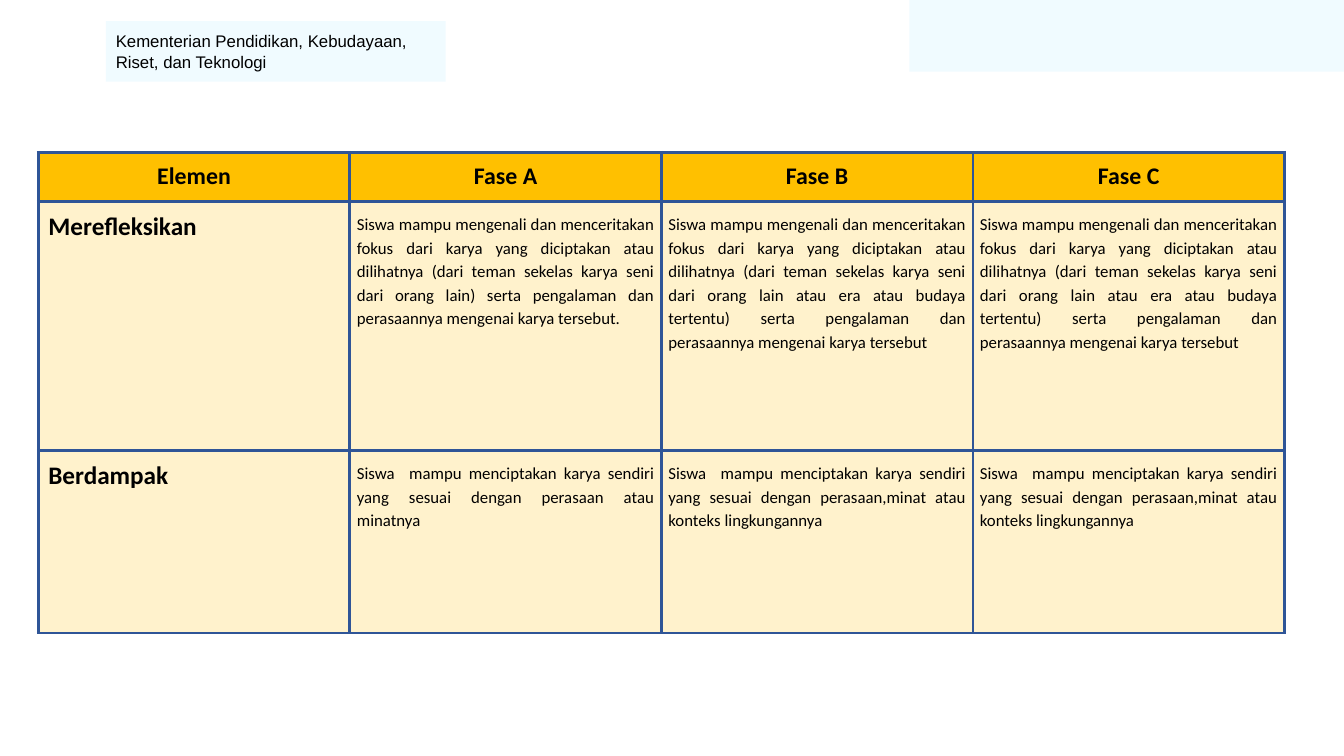
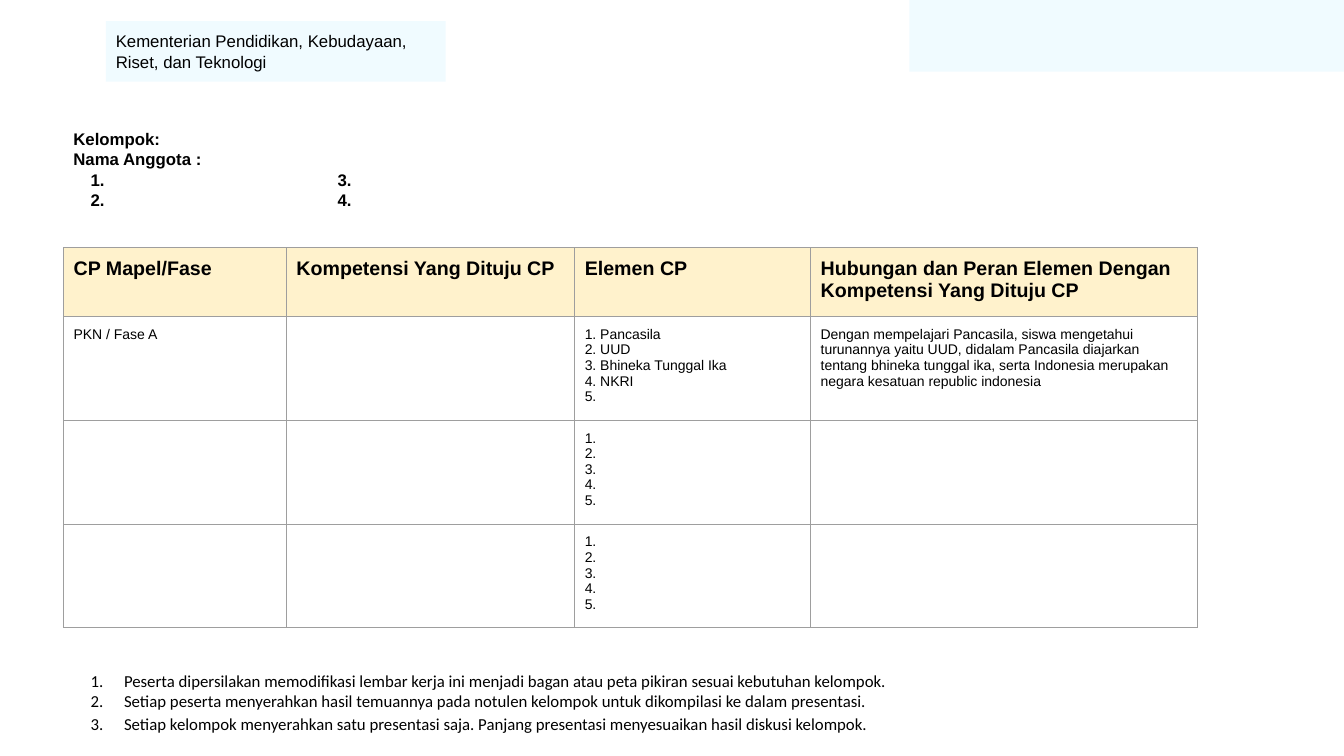
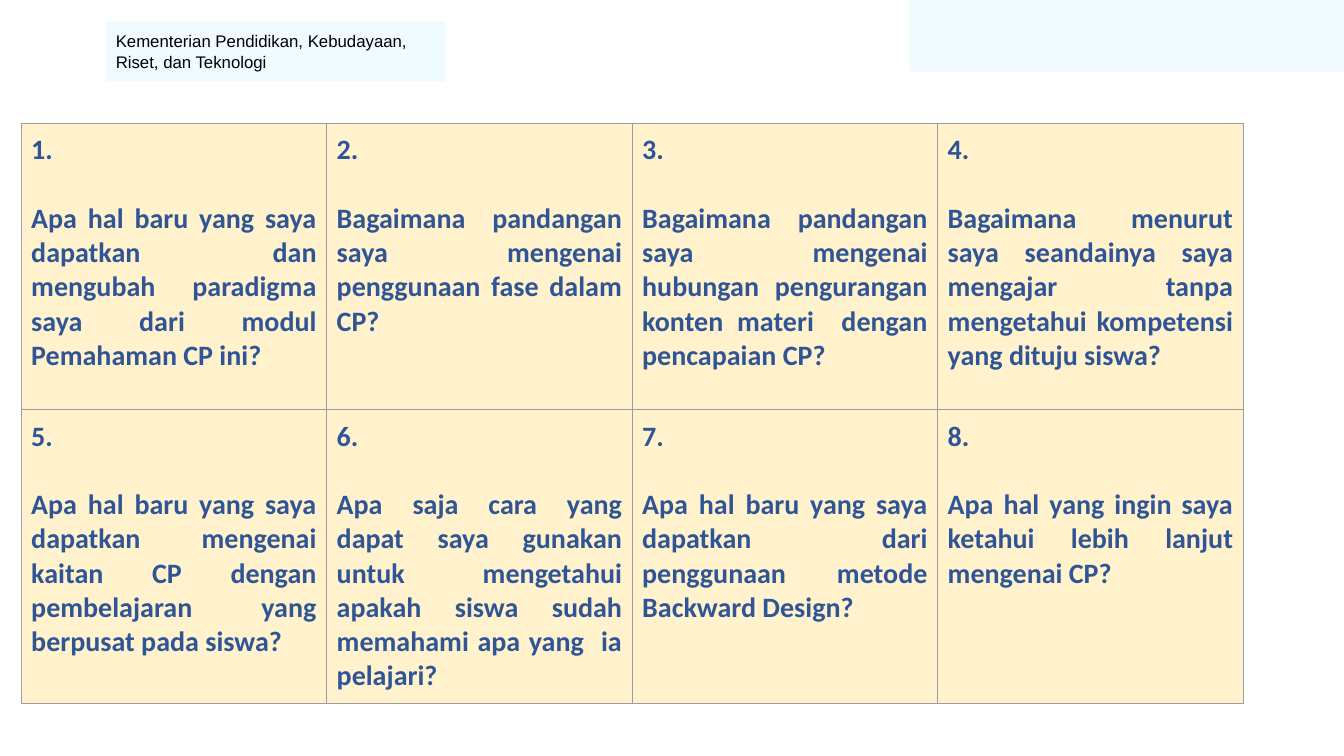
from dataclasses import dataclass

from lxml import etree
from pptx import Presentation
from pptx.dml.color import RGBColor
from pptx.enum.shapes import MSO_SHAPE as Shape
from pptx.enum.text import MSO_ANCHOR as Anchor, MSO_AUTO_SIZE as AutoSize, PP_ALIGN as Align
from pptx.oxml.ns import qn
from pptx.util import Inches, Pt


# Theme: colours, type styles and cell margins
@dataclass(frozen=True)
class Theme:
    black = RGBColor.from_string("000000")
    blue = RGBColor.from_string("2F5597")
    gray = RGBColor.from_string("9E9E9E")
    ice = RGBColor.from_string("F0FBFF")
    amber = RGBColor.from_string("FFC000")
    cream = RGBColor.from_string("FFF2CC")
    margin = 0.1
    narrow_margin = 0.07


THEME = Theme()


def text_style(size, name="Calibri", bold=False, color=THEME.black, **paragraph):
    return {"font": {"size": Pt(size), "name": name, "bold": bold},
            "color": color, "paragraph": paragraph}


STYLES = {
    "band": text_style(12, "Arial"),
    "phase_head": text_style(17, bold=True, alignment=Align.CENTER),
    "element": text_style(18, bold=True),
    "outcome": text_style(12, alignment=Align.JUSTIFY, line_spacing=1.15),
    "group": text_style(12, "Arial", bold=True),
    "sheet_head": text_style(14, "Arial", bold=True),
    "sheet": text_style(10, "Arial"),
    "instruction": text_style(12, space_before=Pt(0)),
    "question": text_style(20, bold=True, color=THEME.blue, alignment=Align.JUSTIFY),
}


# Content
REFLECT_A = ("Siswa mampu mengenali dan menceritakan fokus dari karya yang diciptakan atau "
             "dilihatnya (dari teman sekelas karya seni dari orang lain) serta pengalaman dan "
             "perasaannya mengenai karya tersebut.")
REFLECT_BC = ("Siswa mampu mengenali dan menceritakan fokus dari karya yang diciptakan atau "
              "dilihatnya (dari teman sekelas karya seni dari orang lain atau era atau budaya "
              "tertentu) serta pengalaman dan perasaannya mengenai karya tersebut")
IMPACT_A = "Siswa  mampu menciptakan karya sendiri yang sesuai dengan perasaan atau minatnya"
IMPACT_BC = ("Siswa  mampu menciptakan karya sendiri yang sesuai dengan perasaan,minat atau "
             "konteks lingkungannya")
PHASE_ROWS = [
    ["Elemen", "Fase A", "Fase B", "Fase C"],
    ["Merefleksikan", REFLECT_A, REFLECT_BC, REFLECT_BC],
    ["Berdampak", IMPACT_A, IMPACT_BC, IMPACT_BC],
]

BLANK_LIST = "\n".join(f"{number}." for number in range(1, 6))
SHEET_ROWS = [
    ["CP Mapel/Fase", "Kompetensi Yang Dituju CP", "Elemen CP",
     "Hubungan dan Peran Elemen Dengan Kompetensi Yang Dituju CP"],
    ["PKN / Fase A", "", "1. Pancasila\n2. UUD\n3. Bhineka Tunggal Ika\n4. NKRI\n5.",
     "Dengan mempelajari Pancasila, siswa mengetahui turunannya yaitu UUD, didalam Pancasila "
     "diajarkan tentang bhineka tunggal ika, serta Indonesia merupakan negara kesatuan "
     "republic indonesia"],
    ["", "", BLANK_LIST, ""],
    ["", "", BLANK_LIST, ""],
]
INSTRUCTIONS = [
    "Peserta dipersilakan memodifikasi lembar kerja ini menjadi bagan atau peta pikiran "
    "sesuai kebutuhan kelompok.",
    "Setiap peserta menyerahkan hasil temuannya pada notulen kelompok untuk dikompilasi ke "
    "dalam presentasi.",
    "Setiap kelompok menyerahkan satu presentasi saja. Panjang presentasi menyesuaikan hasil "
    "diskusi kelompok.",
]

QUESTIONS = [
    "Apa hal baru yang saya dapatkan dan mengubah paradigma saya dari modul Pemahaman CP ini?",
    "Bagaimana pandangan saya mengenai penggunaan fase dalam CP?",
    "Bagaimana pandangan saya mengenai hubungan  pengurangan konten materi  dengan "
    "pencapaian CP?",
    "Bagaimana menurut saya seandainya saya mengajar tanpa mengetahui kompetensi yang dituju "
    "siswa?",
    "Apa hal baru yang saya dapatkan mengenai kaitan CP dengan pembelajaran yang berpusat "
    "pada siswa?",
    "Apa saja cara yang dapat saya gunakan untuk mengetahui apakah siswa sudah memahami apa "
    "yang  ia pelajari?",
    "Apa hal baru yang saya dapatkan dari penggunaan metode Backward Design?",
    "Apa hal yang ingin saya ketahui lebih lanjut mengenai CP?",
]


# Text helpers
def set_values(target, values):
    for name, value in values.items():
        setattr(target, name, value)


def set_margins(target, side=THEME.margin):
    set_values(target, {"margin_left": Inches(side), "margin_right": Inches(side),
                        "margin_top": Inches(THEME.margin),
                        "margin_bottom": Inches(THEME.margin)})


def write(frame, lines, style):
    for index, line in enumerate(lines):
        paragraph = frame.add_paragraph() if index else frame.paragraphs[0]
        set_values(paragraph, style["paragraph"])
        run = paragraph.add_run()
        run.text = line
        set_values(run.font, style["font"])
        run.font.color.rgb = style["color"]


def number_paragraph(paragraph, tab=None):
    properties = paragraph._p.get_or_add_pPr()
    properties.set("marL", str(Inches(0.5)))
    properties.set("indent", str(Inches(-0.33)))
    etree.SubElement(properties, qn("a:buFont"), typeface="+mj-lt")
    etree.SubElement(properties, qn("a:buAutoNum"), type="arabicPeriod")
    if tab:
        tabs = etree.SubElement(properties, qn("a:tabLst"))
        etree.SubElement(tabs, qn("a:tab"), pos=str(Inches(tab)), algn="l")


def prepare_frame(frame):
    set_margins(frame)
    set_values(frame, {"word_wrap": True, "auto_size": AutoSize.NONE,
                       "vertical_anchor": Anchor.TOP})


# Table helpers
def set_borders(cell, color, width):
    properties = cell._tc.get_or_add_tcPr()
    for side in ("lnL", "lnR", "lnT", "lnB"):
        line = etree.SubElement(properties, qn(f"a:{side}"), w=str(Pt(width)))
        fill = etree.SubElement(line, qn("a:solidFill"))
        etree.SubElement(fill, qn("a:srgbClr"), val=str(color))


def add_grid(slide, left, top, widths, heights, border):
    frame = slide.shapes.add_table(len(heights), len(widths), Inches(left), Inches(top),
                                   Inches(sum(widths)), Inches(sum(heights)))
    table = frame.table
    set_values(table, {"first_row": False, "horz_banding": False})
    for column, width in zip(table.columns, widths):
        column.width = Inches(width)
    for row, height in zip(table.rows, heights):
        row.height = Inches(height)
    for cell in table.iter_cells():
        set_borders(cell, *border)
        set_margins(cell)
    return table


def fill_cell(cell, text, style, color=None):
    if color is None:
        cell.fill.background()
    else:
        cell.fill.solid()
        cell.fill.fore_color.rgb = color
    if text:
        write(cell.text_frame, text.split("\n"), STYLES[style])


# Shared bands, kept on the slide master
def add_master_bands(presentation, slide):
    bands = [((9.02, 0, 4.32, 0.71), None),
             ((1.05, 0.21, 3.37, 0.6),
              "Kementerian Pendidikan, Kebudayaan, Riset, dan Teknologi")]
    for number, (box, text) in enumerate(bands, start=101):
        shape = slide.shapes.add_shape(Shape.RECTANGLE, *map(Inches, box))
        shape.shadow.inherit = False
        shape.fill.solid()
        shape.fill.fore_color.rgb = THEME.ice
        shape.line.fill.background()
        if text:
            prepare_frame(shape.text_frame)
            shape.text_frame.vertical_anchor = Anchor.MIDDLE
            write(shape.text_frame, [text], STYLES["band"])
            shape.text_frame.paragraphs[0].alignment = Align.LEFT
        shape.element.nvSpPr.cNvPr.set("id", str(number))
        presentation.slide_master.shapes.element.append(shape.element)


# Slides
def build_phases(slide):
    table = add_grid(slide, 0.38, 1.51, [3.09] * 4, [0.49, 2.47, 1.81], (THEME.blue, 2.25))
    for row, texts in enumerate(PHASE_ROWS):
        for column, text in enumerate(texts):
            cell = table.cell(row, column)
            if row == 0:
                fill_cell(cell, text, "phase_head", THEME.amber)
            elif column == 0:
                fill_cell(cell, text, "element", THEME.cream)
            else:
                set_margins(cell, THEME.narrow_margin)
                fill_cell(cell, text, "outcome", THEME.cream)


def build_worksheet(slide):
    box = slide.shapes.add_textbox(*map(Inches, (0.63, 1.18, 6.34, 1.01)))
    prepare_frame(box.text_frame)
    write(box.text_frame, ["Kelompok:", "Nama Anggota :", "\t3.", "\t4."], STYLES["group"])
    for paragraph in box.text_frame.paragraphs[2:]:
        number_paragraph(paragraph, tab=2.62)

    table = add_grid(slide, 0.63, 2.46, [2.21, 2.86, 2.34, 3.84], [0.68] + [1.03] * 3,
                     (THEME.gray, 0.75))
    for row, texts in enumerate(SHEET_ROWS):
        style, color = ("sheet", None) if row else ("sheet_head", THEME.cream)
        for column, text in enumerate(texts):
            fill_cell(table.cell(row, column), text, style, color)

    title = slide.shapes.title
    title.element.getparent().remove(title.element)
    body = slide.placeholders[1]
    set_values(body, dict(zip(("left", "top", "width", "height"),
                              map(Inches, (0.63, 6.55, 10.46, 1.08)))))
    prepare_frame(body.text_frame)
    write(body.text_frame, INSTRUCTIONS, STYLES["instruction"])
    for paragraph in body.text_frame.paragraphs:
        number_paragraph(paragraph)
    body.text_frame.paragraphs[-1].space_before = Pt(2)


def build_questions(slide):
    table = add_grid(slide, 0.21, 1.22, [3.03] * 4, [2.84, 2.87], (THEME.gray, 0.75))
    for number, (cell, question) in enumerate(zip(table.iter_cells(), QUESTIONS), start=1):
        fill_cell(cell, f"{number}.\n{question}", "question", THEME.cream)
        cell.text_frame.paragraphs[1].space_before = Pt(24.4)


def main():
    presentation = Presentation()
    set_values(presentation, {"slide_width": Inches(13.33), "slide_height": Inches(7.5)})
    content, blank = presentation.slide_layouts[1], presentation.slide_layouts[6]
    pages = [(blank, build_phases), (content, build_worksheet), (blank, build_questions)]
    for index, (layout, build) in enumerate(pages):
        slide = presentation.slides.add_slide(layout)
        if index == 0:
            add_master_bands(presentation, slide)
        build(slide)
    presentation.save("out.pptx")


if __name__ == "__main__":
    main()
